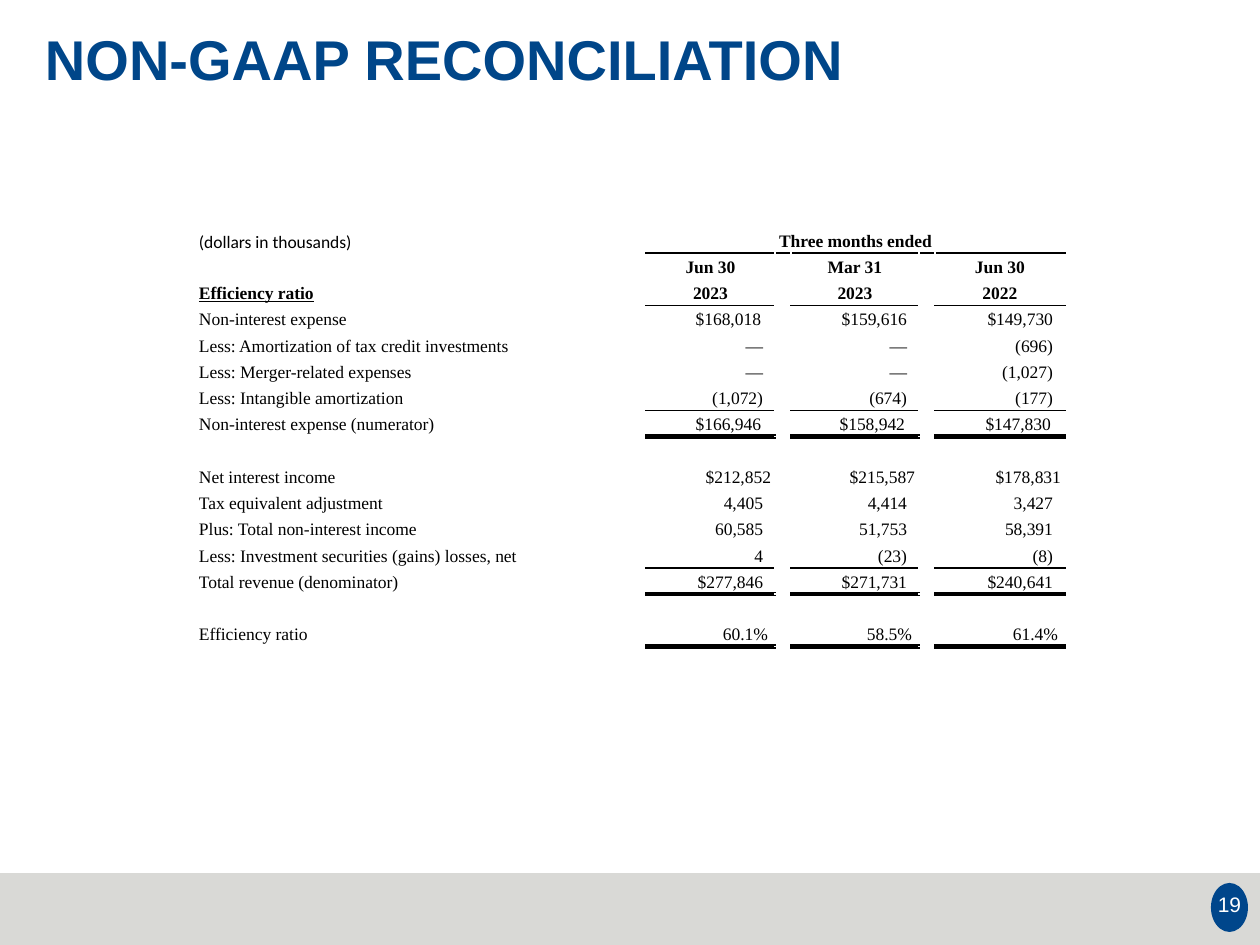
from lxml import etree
from pptx import Presentation
from pptx import util as u
from pptx.dml.color import RGBColor
from pptx.enum import shapes, text
from pptx.oxml import ns

PX = 9144000 / 1260
BLUE = RGBColor(0x00, 0x46, 0x89)
BADGE_BLUE = RGBColor(0x00, 0x46, 0x8B)
GREY = RGBColor(0xD9, 0xD9, 0xD6)
BLACK = RGBColor(0, 0, 0)
WHITE = RGBColor(255, 255, 255)
SERIF = "Times New Roman"

COLUMNS = [431, 20, 129, 16, 128, 16, 130]
VALUE_COLUMNS = (2, 4, 6)
FIRST_ROW, OTHER_ROWS = 25, 394

# Label, three values, right inset of the values
ROWS = [
    ("Non-interest expense", ("$168,018", "$159,616", "$149,730"), 12),
    ("Less: Amortization of tax credit investments", ("—", "—", "(696)"), 12),
    ("Less: Merger-related expenses", ("—", "—", "(1,027)"), 12),
    ("Less: Intangible amortization", ("(1,072)", "(674)", "(177)"), 12),
    ("Non-interest expense (numerator)", ("$166,946", "$158,942", "$147,830"), 14),
    None,
    ("Net interest income", ("$212,852", "$215,587", "$178,831"), 4),
    ("Tax equivalent adjustment", ("4,405", "4,414", "3,427"), 12),
    ("Plus: Total non-interest income", ("60,585", "51,753", "58,391"), 12),
    ("Less: Investment securities (gains) losses, net", ("4", "(23)", "(8)"), 12),
    ("Total revenue (denominator)", ("$277,846", "$271,731", "$240,641"), 12),
    None,
    ("Efficiency ratio", ("60.1%", "58.5%", "61.4%"), 7),
]
HEADER_ROWS = 3
# Black rules under the value columns: row to points
RULES = {0: 1, 2: 1, 6: 1, 7: 3, 12: 1, 13: 3, 15: 3}
MERGED_LABELS = (2, 3, 4, 6, 7, 10, 11, 12, 13, 15)


def px(length):
    return u.Emu(round(length * PX))


def set_margins(target, left, top, right, bottom):
    target.margin_left, target.margin_top = px(left), px(top)
    target.margin_right, target.margin_bottom = px(right), px(bottom)


def add_span(para, words, size, name, color, bold=False, underline=False):
    span = para.add_run()
    span.text = words
    font = span.font
    font.size, font.name = u.Pt(size), name
    font.bold, font.underline = bold, underline
    font.color.rgb = color


def add_plain_shape(page, kind, left, top, width, height, color):
    shape = page.shapes.add_shape(kind, px(left), px(top), px(width), px(height))
    shape.shadow.inherit = False
    shape.fill.solid()
    shape.fill.fore_color.rgb = color
    shape.line.fill.background()


def add_title(page, words):
    title = page.shapes.title
    title.left, title.top, title.width, title.height = px(32), px(24), px(1218), px(144)
    frame = title.text_frame
    frame.auto_size = text.MSO_AUTO_SIZE.NONE
    frame.vertical_anchor = text.MSO_ANCHOR.TOP
    set_margins(frame, 13, 8, 13, 13)
    para = frame.paragraphs[0]
    para.alignment = text.PP_ALIGN.LEFT
    para.line_spacing = 0.9
    add_span(para, words, 32, "Arial", BLUE, bold=True)


def add_page_number(page, number):
    box = page.shapes.add_textbox(px(1200), px(882), px(59), px(49))
    frame = box.text_frame
    frame.word_wrap = True
    frame.vertical_anchor = text.MSO_ANCHOR.MIDDLE
    set_margins(frame, 13, 8, 13, 13)
    para = frame.paragraphs[0]
    para.alignment = text.PP_ALIGN.CENTER
    add_span(para, number, 12, "Arial", WHITE)


def add_border(cell, side, color, points):
    props = cell._tc.get_or_add_tcPr()
    line = etree.SubElement(props, ns.qn("a:" + side), w=str(u.Pt(points)))
    fill = etree.SubElement(line, ns.qn("a:solidFill"))
    etree.SubElement(fill, ns.qn("a:srgbClr"), val=str(color))


def rule_below(row, column):
    ruled = column >= 2 if row == 0 else column in VALUE_COLUMNS
    if ruled and row in RULES:
        return BLACK, RULES[row]
    return WHITE, 1


def prepare_cell(cell, row, column):
    # Borders go before the fill in the cell properties
    add_border(cell, "lnL", WHITE, 1)
    add_border(cell, "lnR", WHITE, 1)
    add_border(cell, "lnT", *rule_below(row - 1, column))
    add_border(cell, "lnB", *rule_below(row, column))
    cell.fill.background()
    cell.vertical_anchor = text.MSO_ANCHOR.BOTTOM
    set_margins(cell, 4, 0, 4, 2)


def fill_cell(cell, words, align, name=SERIF, bold=False, underline=False):
    para = cell.text_frame.paragraphs[0]
    para.alignment = align
    para.line_spacing = 1.0
    add_span(para, words, 10, name, BLACK, bold, underline)


def fill_headers(table):
    left, center = text.PP_ALIGN.LEFT, text.PP_ALIGN.CENTER
    units = table.cell(0, 0)
    units.margin_bottom = 0
    fill_cell(units, "(dollars in thousands)", left, name="Calibri")
    fill_cell(table.cell(0, 2), "Three months ended", center, bold=True)
    fill_cell(table.cell(2, 0), "Efficiency ratio", left, bold=True, underline=True)
    periods = (("Jun 30", "2023"), ("Mar 31", "2023"), ("Jun 30", "2022"))
    for column, period in zip(VALUE_COLUMNS, periods):
        for row, words in enumerate(period, 1):
            fill_cell(table.cell(row, column), words, center, bold=True)


def fill_body(table):
    for row, entry in enumerate(ROWS, HEADER_ROWS):
        if entry is None:
            continue
        label, values, inset = entry
        fill_cell(table.cell(row, 0), label, text.PP_ALIGN.LEFT)
        for column, value in zip(VALUE_COLUMNS, values):
            cell = table.cell(row, column)
            cell.margin_left, cell.margin_right = 0, px(inset)
            fill_cell(cell, value, text.PP_ALIGN.RIGHT)
    table.cell(HEADER_ROWS, 2).margin_right = px(14)


def add_reconciliation(page):
    count = HEADER_ROWS + len(ROWS)
    table = page.shapes.add_table(count, len(COLUMNS), px(195), px(228), px(sum(COLUMNS)),
                                  px(FIRST_ROW + OTHER_ROWS)).table
    table.first_row = table.horz_banding = False
    for column, width in zip(table.columns, COLUMNS):
        column.width = px(width)
    for index, row in enumerate(table.rows):
        row.height = px(OTHER_ROWS / (count - 1) if index else FIRST_ROW)
        for column, cell in enumerate(row.cells):
            prepare_cell(cell, index, column)
    table.cell(0, 2).merge(table.cell(0, 6))
    for row in MERGED_LABELS:
        table.cell(row, 0).merge(table.cell(row, 1))
    fill_headers(table)
    fill_body(table)
    # Small type in empty cells keeps the rows low
    for cell in table.iter_cells():
        para = cell.text_frame.paragraphs[0]
        if not para.runs:
            etree.SubElement(para._p, ns.qn("a:endParaRPr"), sz="1000")


def main():
    deck = Presentation()
    deck.slide_width, deck.slide_height = px(1260), px(945)
    page = deck.slides.add_slide(deck.slide_layouts[5])
    # Footer band and number badge
    add_plain_shape(page, shapes.MSO_SHAPE.RECTANGLE, 0, 873, 1260, 72, GREY)
    add_plain_shape(page, shapes.MSO_SHAPE.OVAL, 1211, 883, 37, 49, BADGE_BLUE)
    add_title(page, "NON-GAAP RECONCILIATION")
    add_page_number(page, "19")
    add_reconciliation(page)
    deck.save("out.pptx")


if __name__ == "__main__":
    main()
